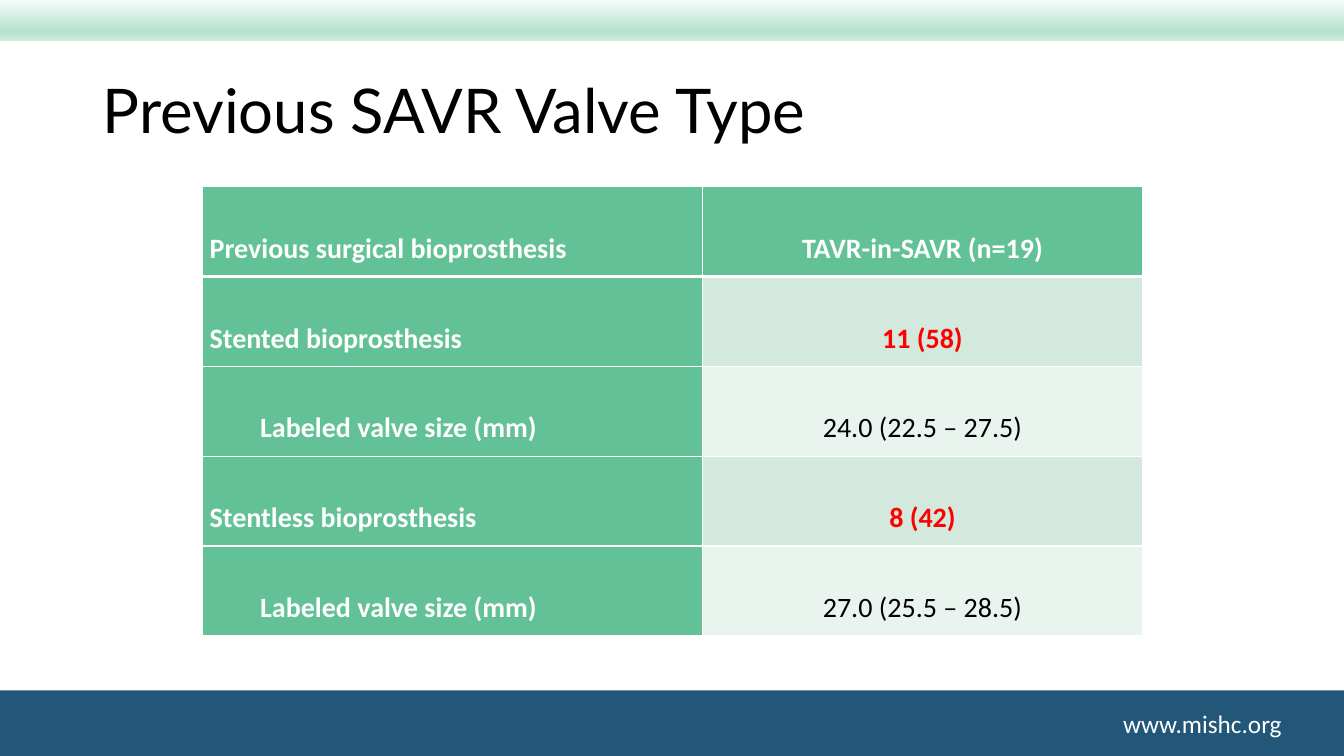
from dataclasses import dataclass
from lxml.etree import SubElement
from pptx import Presentation
from pptx.dml.color import RGBColor
from pptx.enum.shapes import MSO_SHAPE
from pptx.enum.text import MSO_ANCHOR, MSO_AUTO_SIZE, PP_ALIGN
from pptx.oxml.ns import qn
from pptx.util import Inches, Pt


@dataclass(frozen=True)
class Theme:
    white: str = "FFFFFF"
    black: str = "000000"
    red: str = "FF0000"
    navy: str = "23577A"
    green: str = "62C196"
    bands: tuple = ("D3E9DD", "EAF4EF")
    fade: tuple = ((0, "F7FCFA"), (74, "B8E3D0"), (83, "B8E3D0"), (100, "D0ECE0"))
    head_font: str = "Lato"
    body_font: str = "Calibri"
    head_size: int = 44
    cell_size: int = 20
    foot_size: int = 18


THEME = Theme()

ROWS = [
    ("Previous surgical bioprosthesis", "TAVR-in-SAVR (n=19)"),
    ("Stented bioprosthesis", "11 (58)"),
    ("Labeled valve size (mm)", "24.0 (22.5 – 27.5)"),
    ("Stentless bioprosthesis", "8 (42)"),
    ("Labeled valve size (mm)", "27.0 (25.5 – 28.5)"),
]


def add_run(para, text, size, color, font=THEME.body_font, bold=False):
    run = para.add_run()
    run.text = text
    run.font.name = font
    run.font.size = Pt(size)
    run.font.bold = bold
    run.font.color.rgb = RGBColor.from_string(color)


def add_bar(slide, box):
    bar = slide.shapes.add_shape(MSO_SHAPE.RECTANGLE, *map(Inches, box))
    bar.shadow.inherit = False
    bar.line.fill.background()
    return bar


def add_top(slide, box):
    bar = add_bar(slide, box)
    bar.fill.gradient()
    bar.fill.gradient_angle = 270
    stops = bar.fill._xPr.find(".//" + qn("a:gsLst"))
    for old in list(stops):
        stops.remove(old)
    for place, color in THEME.fade:
        stop = SubElement(stops, qn("a:gs"), pos=str(place * 1000))
        SubElement(stop, qn("a:srgbClr"), val=color)


def add_foot(slide, box):
    left, top, width, height = box
    bar = add_bar(slide, box)
    bar.fill.solid()
    bar.fill.fore_color.rgb = RGBColor.from_string(THEME.navy)
    label = slide.shapes.add_textbox(
        Inches(left + width - 2.29), Inches(top + 0.13), Inches(1.79), Inches(0.4)
    )
    frame = label.text_frame
    frame.word_wrap = True
    add_run(frame.paragraphs[0], "www.mishc.org", THEME.foot_size, THEME.white)


def add_title(slide, box):
    title = slide.shapes.title
    title.left, title.top, title.width, title.height = map(Inches, box)
    frame = title.text_frame
    frame.auto_size = MSO_AUTO_SIZE.NONE
    frame.vertical_anchor = MSO_ANCHOR.MIDDLE
    para = frame.paragraphs[0]
    para.alignment = PP_ALIGN.LEFT
    para.line_spacing = 0.9
    add_run(para, "Previous SAVR Valve Type", THEME.head_size, THEME.black, THEME.head_font)


def set_edge(cell, side, width):
    edge = SubElement(cell._tc.get_or_add_tcPr(), qn("a:" + side), w=str(Pt(width)))
    fill = SubElement(edge, qn("a:solidFill"))
    SubElement(fill, qn("a:srgbClr"), val=THEME.white)


def fill_cell(cell, text, row, col):
    thick = {(0, "lnB"), (1, "lnT")}
    for side in ("lnL", "lnR", "lnT", "lnB"):
        set_edge(cell, side, 3 if (row, side) in thick else 1)
    label = row == 0 or col == 0
    main = row % 2 == 1
    cell.fill.solid()
    shade = THEME.green if label else THEME.bands[(row - 1) % 2]
    cell.fill.fore_color.rgb = RGBColor.from_string(shade)
    cell.vertical_anchor = MSO_ANCHOR.MIDDLE
    cell.margin_left = cell.margin_right = Inches(0.07)
    cell.margin_top = cell.margin_bottom = 0
    para = cell.text_frame.paragraphs[0]
    para.alignment = PP_ALIGN.CENTER if col else PP_ALIGN.LEFT
    para.line_spacing = 2.0
    para.space_after = Pt(8 if col else 3)
    if col == 0 and row and not main:
        para._p.get_or_add_pPr().set("marL", str(Inches(0.5)))
    color = THEME.white if label else THEME.red if main else THEME.black
    add_run(para, text, THEME.cell_size, color, bold=label or main)


def add_grid(slide, box):
    left, top, width, height = map(Inches, box)
    table = slide.shapes.add_table(len(ROWS), 2, left, top, width, height).table
    table.columns[0].width = Inches(4.96)
    table.columns[1].width = width - Inches(4.96)
    for row, texts in enumerate(ROWS):
        table.rows[row].height = height // len(ROWS)
        for col, text in enumerate(texts):
            fill_cell(table.cell(row, col), text, row, col)


def main():
    deck = Presentation()
    deck.slide_width = Inches(13.33)
    deck.slide_height = Inches(7.5)
    slide = deck.slides.add_slide(deck.slide_layouts[5])
    add_foot(slide, (0, 6.85, 13.33, 0.65))
    add_top(slide, (0, 0, 13.33, 0.4))
    add_title(slide, (0.92, 0.4, 11.5, 1.45))
    add_grid(slide, (2.01, 1.85, 9.32, 4.46))
    deck.save("out.pptx")


if __name__ == "__main__":
    main()
